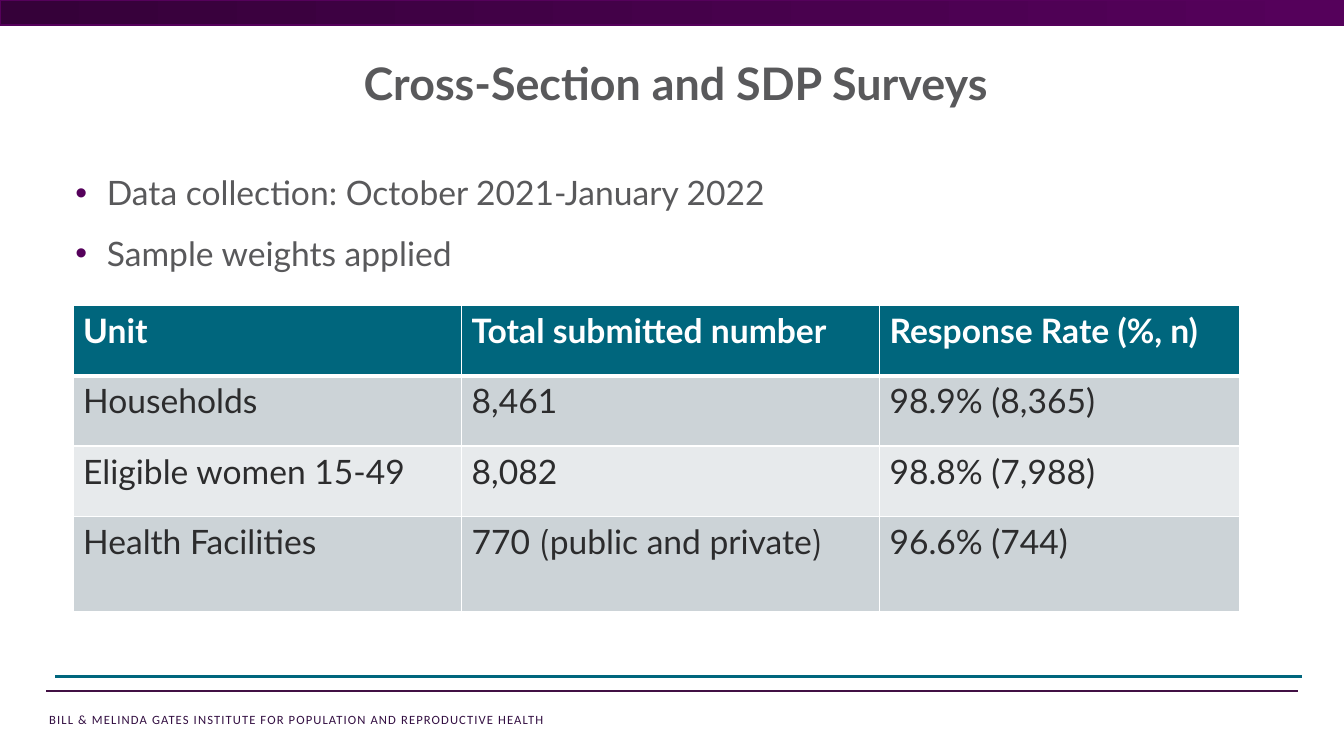
"""Build a survey slide with bullets and a table of response rates."""
from dataclasses import dataclass

from lxml.etree import SubElement
from pptx import Presentation
from pptx.dml.color import RGBColor
from pptx.enum.shapes import MSO_CONNECTOR, MSO_SHAPE
from pptx.enum.text import PP_ALIGN
from pptx.oxml.ns import qn
from pptx.util import Pt

PLUM, TEAL, GREY, INK, WHITE = "55015B", "00667D", "59595B", "2C2C2D", "FFFFFF"
DARK, LIGHT = "CCD3D7", "E7EAEC"


@dataclass
class Style:
    """Look of a run of text."""
    size: float
    hue: str
    face: str = "Lato"
    bold: bool = False
    space: int = 0


@dataclass
class Block:
    """Box of text with one line per paragraph."""
    left: float
    top: float
    width: float
    height: float
    lines: list[str]
    style: Style
    align: PP_ALIGN = PP_ALIGN.LEFT
    dots: bool = False


@dataclass
class Rule:
    """Level line across the slide."""
    start: float
    end: float
    top: float
    hue: str
    weight: float


@dataclass
class Row:
    """Table row, where a cell is a list of text and font pairs."""
    height: float
    fill: str
    style: Style
    cells: list[list[tuple[str, str]]]
    upper: float = 1
    lower: float = 1


def paint(code: str) -> RGBColor:
    """Turn a hex string into a colour."""
    return RGBColor.from_string(code)


def add_run(para, text: str, style: Style, face: str = "") -> None:
    """Add one styled run to a paragraph."""
    run = para.add_run()
    run.text = text
    font = run.font
    font.size, font.bold, font.name = Pt(style.size), style.bold, face or style.face
    font.color.rgb = paint(style.hue)
    if style.space:
        font._element.set("spc", str(style.space))


def add_dot(para) -> None:
    """Give a paragraph a bullet and a hanging indent."""
    props = para._p.get_or_add_pPr()
    props.set("marL", str(Pt(22.5)))
    props.set("indent", str(-Pt(22.5)))
    tint = SubElement(props, qn("a:buClr"))
    SubElement(tint, qn("a:srgbClr"), val=PLUM)
    SubElement(props, qn("a:buFont"), typeface="Arial")
    SubElement(props, qn("a:buChar"), char="•")
    para.line_spacing = 1.5


def draw_block(slide, block: Block) -> None:
    """Draw a text box."""
    box = slide.shapes.add_textbox(
        Pt(block.left), Pt(block.top), Pt(block.width), Pt(block.height))
    frame = box.text_frame
    frame.word_wrap = True
    for spot, line in enumerate(block.lines):
        para = frame.add_paragraph() if spot else frame.paragraphs[0]
        if block.dots:
            add_dot(para)
        para.alignment = block.align
        add_run(para, line, block.style)


def draw_rule(slide, rule: Rule) -> None:
    """Draw a level line."""
    line = slide.shapes.add_connector(
        MSO_CONNECTOR.STRAIGHT, Pt(rule.start), Pt(rule.top), Pt(rule.end), Pt(rule.top))
    line.line.color.rgb = paint(rule.hue)
    line.line.width = Pt(rule.weight)
    SubElement(line._element.spPr, qn("a:effectLst"))


def draw_band(slide) -> None:
    """Draw the shaded band along the top edge."""
    band = slide.shapes.add_shape(MSO_SHAPE.RECTANGLE, 0, 0, Pt(960), Pt(18))
    band.shadow.inherit = False
    band.fill.gradient()
    band.fill.gradient_angle = 0
    for stop, hue in zip(band.fill.gradient_stops, ("350139", PLUM)):
        stop.color.rgb = paint(hue)
    band.line.color.rgb = paint(PLUM)
    band.line.width = Pt(1)


def add_edge(cell, side: str, weight: float) -> None:
    """Draw one white border of a cell."""
    edge = SubElement(cell._tc.get_or_add_tcPr(), qn(f"a:ln{side}"), w=str(Pt(weight)))
    SubElement(SubElement(edge, qn("a:solidFill")), qn("a:srgbClr"), val=WHITE)


def draw_table(slide, left: float, top: float, widths: list[float], rows: list[Row]) -> None:
    """Draw the table row by row."""
    tall = sum(row.height for row in rows)
    table = slide.shapes.add_table(
        len(rows), len(widths), Pt(left), Pt(top), Pt(sum(widths)), Pt(tall)).table
    for column, width in zip(table.columns, widths):
        column.width = Pt(width)
    for spot, row in enumerate(rows):
        table.rows[spot].height = Pt(row.height)
        for cell, parts in zip(table.rows[spot].cells, row.cells):
            for side, weight in zip("LRTB", (1, 1, row.upper, row.lower)):
                add_edge(cell, side, weight)
            cell.fill.solid()
            cell.fill.fore_color.rgb = paint(row.fill)
            for text, face in parts:
                add_run(cell.text_frame.paragraphs[0], text, row.style, face)


def plain(*texts: str) -> list[list[tuple[str, str]]]:
    """Make cells that hold one run each."""
    return [[(text, "Lato")] for text in texts]


HEAD, BODY = Style(24, WHITE, bold=True), Style(24, INK)
BLOCKS = [
    Block(28.1, 504.7, 531.4, 18,
          ["BILL & MELINDA GATES INSTITUTE FOR POPULATION AND REPRODUCTIVE HEALTH"],
          Style(9, "330F42", "Calibri", space=80)),
    Block(46.8, 105.1, 849.6, 90,
          ["Data collection: October 2021-January 2022", "Sample weights applied"],
          Style(24, GREY), dots=True),
    Block(46.8, 36, 871.9, 46, ["Cross-Section and SDP Surveys"],
          Style(32, GREY, bold=True), PP_ALIGN.CENTER),
]
RULES = [Rule(33.1, 927.4, 493.7, "411044", 1.25), Rule(39.6, 930.2, 483.1, TEAL, 2.25)]
PUBLIC = [("770 ", "Lato"), ("(", "Montserrat"), ("public and private", "Lato"),
          (")", "Montserrat")]
ROWS = [
    Row(50.2, TEAL, HEAD, plain("Unit", "Total submitted number", "Response Rate (%, n)"),
        lower=3),
    Row(50.2, DARK, BODY, plain("Households", "8,461", "98.9% (8,365)"), upper=3),
    Row(50.2, LIGHT, BODY, plain("Eligible women 15-49", "8,082", "98.8% (7,988)")),
    Row(68, DARK, BODY, [*plain("Health Facilities"), PUBLIC, *plain("96.6% (744)")]),
]


def main() -> None:
    """Build and save the slide."""
    deck = Presentation()
    deck.slide_width, deck.slide_height = Pt(960), Pt(540)
    slide = deck.slides.add_slide(deck.slide_layouts[6])
    draw_band(slide)
    for block in BLOCKS:
        draw_block(slide, block)
    for rule in RULES:
        draw_rule(slide, rule)
    draw_table(slide, 52.2, 218.2, [277.5, 298.5, 257], ROWS)
    deck.save("out.pptx")


if __name__ == "__main__":
    main()
